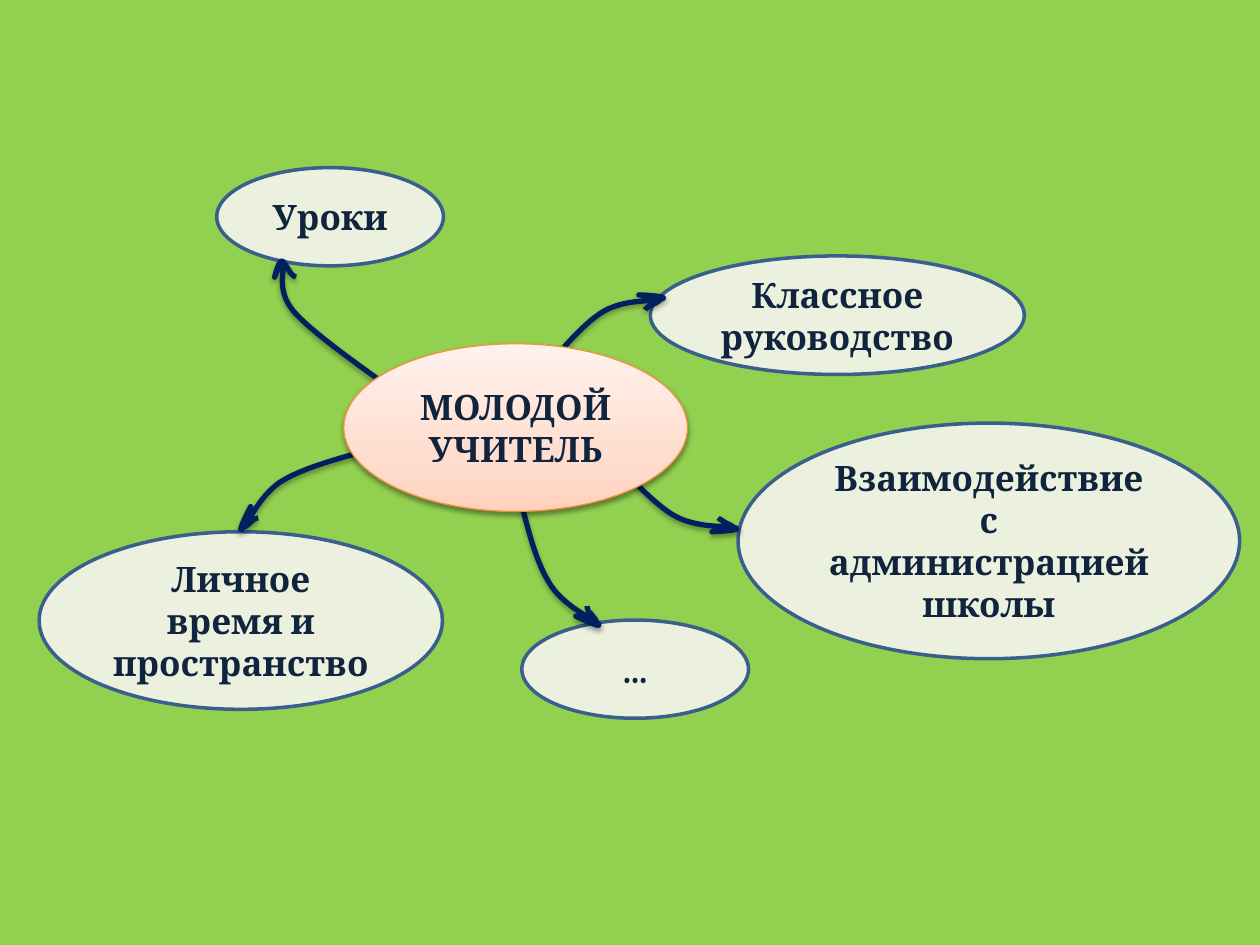
from copy import deepcopy

from lxml.etree import SubElement
from pptx import Presentation
from pptx.dml.color import RGBColor
from pptx.enum.shapes import MSO_SHAPE
from pptx.enum.text import MSO_ANCHOR, PP_ALIGN
from pptx.oxml.ns import qn
from pptx.util import Cm, Pt

COLORS = {
    "background": "92D050",
    "topic": "EBF1DE",
    "topic line": "3A5F8C",
    "text": "10243E",
    "arrow": "002060",
    "centre line": "F59240",
    "shadow": "000000",
}
CENTRE_STOPS = [(0, "FFD2BD"), (35, "FFDED0"), (100, "FFF2ED")]

# left, top, width and height in centimetres
TOPICS = [
    ("Взаимодействие с администрацией школы", 14.88, 8.53, 10.11, 4.75),
    ("…", 10.52, 12.5, 4.57, 1.98),
    ("Личное время и пространство", 0.79, 10.72, 8.13, 3.58),
    ("Классное руководство", 13.11, 5.16, 7.54, 2.39),
    ("Уроки", 4.37, 3.38, 4.57, 1.98),
]

# Each arrow is a start point and then three points per Bezier curve,
# in hundredths of an inch: two curves of shaft, four of hand-drawn head.
ARROW_UNIT = Cm(2.54) / 100
ARROWS = [
    [(414, 316),
     (436, 289), (457, 262), (476, 249), (495, 236), (521, 240), (526, 237),
     (531, 235), (508, 234), (507, 234), (507, 234), (523, 236), (524, 237),
     (525, 239), (517, 242), (515, 243), (513, 245), (512, 245), (512, 246)],
    [(305, 354),
     (275, 362), (244, 370), (225, 381), (206, 392), (197, 416), (192, 420),
     (188, 423), (199, 402), (199, 402), (199, 402), (193, 416), (193, 418),
     (194, 420), (200, 413), (202, 412), (204, 411), (205, 411), (205, 411)],
    [(408, 375),
     (416, 408), (423, 441), (435, 461), (446, 481), (471, 491), (475, 495),
     (479, 500), (457, 489), (457, 489), (457, 489), (472, 495), (473, 494),
     (475, 494), (469, 487), (467, 485), (466, 483), (466, 482), (466, 481)],
    [(469, 344),
     (491, 369), (513, 395), (533, 408), (552, 420), (579, 417), (584, 419),
     (590, 421), (565, 422), (565, 422), (565, 422), (581, 420), (582, 419),
     (584, 418), (575, 415), (573, 413), (571, 412), (570, 411), (570, 411)],
    [(314, 311),
     (281, 287), (248, 264), (233, 247), (218, 229), (227, 212), (225, 208),
     (222, 203), (218, 220), (218, 220), (218, 220), (222, 209), (225, 209),
     (227, 209), (229, 215), (231, 217), (233, 219), (234, 220), (235, 220)],
]


def add_oval(text, left, top, width, height):
    oval = slide.shapes.add_shape(
        MSO_SHAPE.OVAL, Cm(left), Cm(top), Cm(width), Cm(height))
    oval.shadow.inherit = False
    frame = oval.text_frame
    frame.word_wrap = True
    frame.vertical_anchor = MSO_ANCHOR.MIDDLE
    para = frame.paragraphs[0]
    para.text = text
    para.alignment = PP_ALIGN.CENTER
    para.font.name = "Cambria"
    para.font.size = Pt(20)
    para.font.bold = True
    para.font.color.rgb = RGBColor.from_string(COLORS["text"])
    return oval


def drop_shadow(shape, distance, opacity):
    """Cast a soft shadow straight down; opacity is in percent."""
    shape.shadow.inherit = False
    effects = shape._element.spPr.find(qn("a:effectLst"))
    shadow = SubElement(
        effects, qn("a:outerShdw"), blurRad=str(Pt(3.1)),
        dist=str(Pt(distance)), dir="5400000", rotWithShape="0")
    color = SubElement(shadow, qn("a:srgbClr"), val=COLORS["shadow"])
    SubElement(color, qn("a:alpha"), val=str(opacity * 1000))


deck = Presentation()
deck.slide_width, deck.slide_height = Cm(25.4), Cm(19.05)
slide = deck.slides.add_slide(deck.slide_layouts[6])
slide.background.fill.solid()
slide.background.fill.fore_color.rgb = RGBColor.from_string(COLORS["background"])

for topic in TOPICS:
    oval = add_oval(*topic)
    oval.fill.solid()
    oval.fill.fore_color.rgb = RGBColor.from_string(COLORS["topic"])
    oval.line.color.rgb = RGBColor.from_string(COLORS["topic line"])
    oval.line.width = Pt(2)

for start, *points in ARROWS:
    builder = slide.shapes.build_freeform(*start, scale=ARROW_UNIT)
    builder.add_line_segments(points, close=False)
    arrow = builder.convert_to_shape()
    arrow.fill.background()
    arrow.line.color.rgb = RGBColor.from_string(COLORS["arrow"])
    arrow.line.width = Pt(3)
    drop_shadow(arrow, 1.8, 35)

    # Every three straight segments become one Bezier curve
    outline = next(arrow._element.iter(qn("a:path")))
    segments = outline.findall(qn("a:lnTo"))
    for first in range(0, len(segments), 3):
        curve = SubElement(outline, qn("a:cubicBezTo"))
        for segment in segments[first:first + 3]:
            curve.append(segment[0])
            outline.remove(segment)

centre = add_oval("МОЛОДОЙ УЧИТЕЛЬ", 6.93, 6.93, 6.93, 3.38)
centre.fill.gradient()
centre.fill.gradient_angle = 90
stop_list = next(centre._element.spPr.iter(qn("a:gsLst")))
stop_list.append(deepcopy(stop_list[-1]))
for stop, (position, color) in zip(centre.fill.gradient_stops, CENTRE_STOPS):
    stop.position = position / 100
    stop.color.rgb = RGBColor.from_string(color)
centre.line.color.rgb = RGBColor.from_string(COLORS["centre line"])
centre.line.width = Pt(0.75)
drop_shadow(centre, 1.6, 38)

deck.save("out.pptx")
